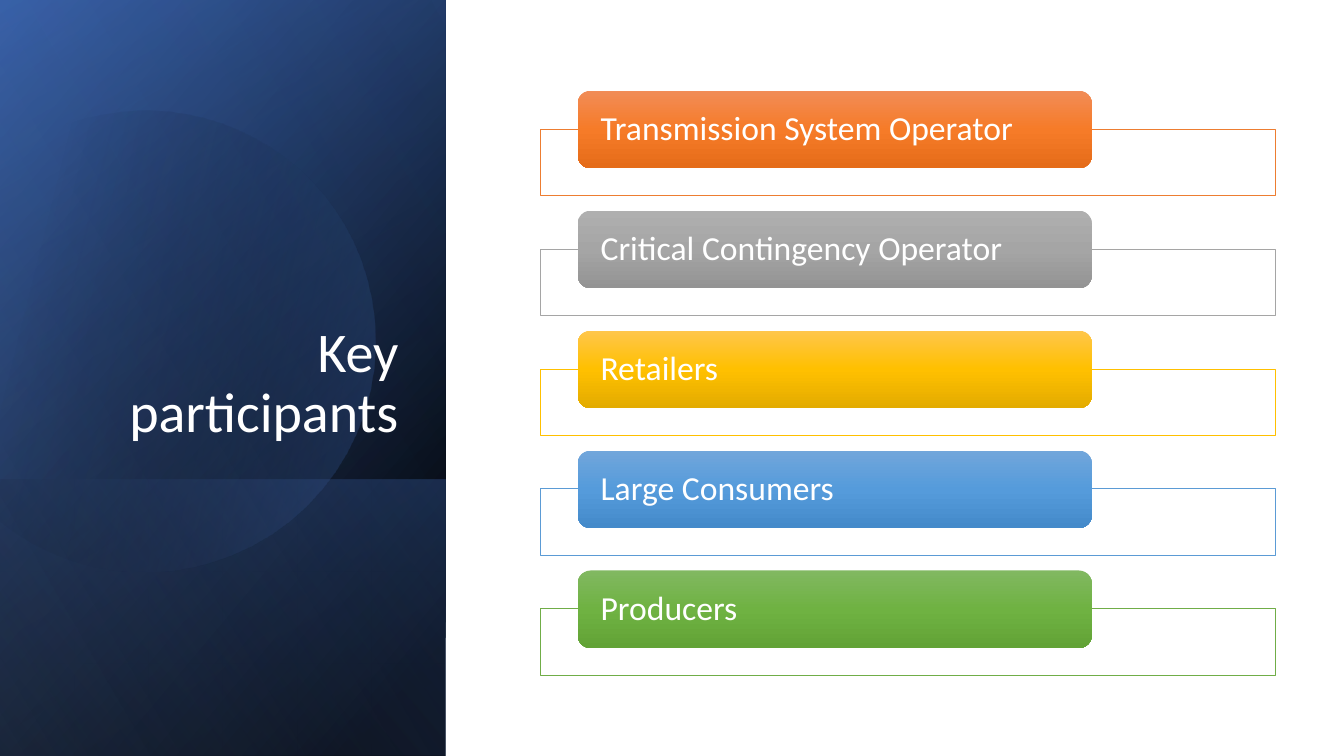
import math

from lxml import etree
from pptx import Presentation
from pptx import util as u
from pptx.dml.color import RGBColor
from pptx.enum import shapes, text
from pptx.oxml.ns import qn

COLUMNS, ROWS = 1333, 750
CELL = u.Inches(0.01)
PANEL_WIDTH = 442
ROW_PITCH = 119
WHITE = "FFFFFF"

PARTICIPANTS = [
    ("Transmission System Operator", "ED7D31", ("F18C57", "F67B28", "E56C19")),
    ("Critical Contingency Operator", "A5A5A5", ("AFAFAF", "A5A5A5", "939393")),
    ("Retailers", "FFC000", ("FFC64B", "FFC000", "E3AB00")),
    ("Large Consumers", "5B9BD5", ("71A6DB", "559BDB", "448ACA")),
    ("Producers", "70AD47", ("81B861", "6FB242", "62A336")),
]

DISC_START = (149, 110)
DISC_ARCS = [
    [(246, 112), (335, 177), (363, 275)],
    [(398, 397), (328, 523), (207, 558)],
    [(131, 580), (53, 561), (-3, 514)],
    [(-15, 503)],
    [(-15, 175)],
    [(0, 161)],
    [(23, 142), (50, 128), (80, 119)],
    [(103, 113), (126, 110), (149, 110)],
]
DISC_CENTRE = (158.5, 334.5)
DISC_TURN = 343.9


def cells(*counts):
    return [round(count * CELL) for count in counts]


def color(value):
    return RGBColor.from_string(value)


def set_alpha(color_element, opacity):
    etree.SubElement(color_element, qn("a:alpha"), val=str(opacity * 1000))


def paint_gradient(shape, stops, angle):
    shape.fill.gradient()
    gradient = shape._element.spPr.find(qn("a:gradFill"))
    stop_list = gradient.find(qn("a:gsLst"))
    for stop in list(stop_list):
        stop_list.remove(stop)
    for position, value, opacity in stops:
        stop = etree.SubElement(stop_list, qn("a:gs"), pos=str(position * 1000))
        set_alpha(etree.SubElement(stop, qn("a:srgbClr"), val=value), opacity)
    gradient.find(qn("a:lin")).set("ang", str(angle * 60000))


def add_block(slide, kind, left, top, width, height):
    block = slide.shapes.add_shape(kind, *cells(left, top, width, height))
    block.shadow.inherit = False
    block.line.fill.background()
    return block


def add_panel_layer(slide, top, stops, angle):
    height = ROWS - top
    layer = add_block(slide, shapes.MSO_SHAPE.RECTANGLE,
                      (PANEL_WIDTH - height) / 2, top + (height - PANEL_WIDTH) / 2,
                      height, PANEL_WIDTH)
    layer.rotation = 90
    layer._element.spPr.find(qn("a:xfrm")).set("flipH", "1")
    paint_gradient(layer, stops, angle)


def curve_points(start, controls, steps=16):
    if len(controls) == 1:
        return controls
    points = [start, *controls]
    return [
        tuple(sum(math.comb(3, k) * (1 - t) ** (3 - k) * t ** k * points[k][axis]
                  for k in range(4)) for axis in (0, 1))
        for t in (step / steps for step in range(1, steps + 1))
    ]


def turn_back(point):
    angle = math.radians(-DISC_TURN)
    dx, dy = point[0] - DISC_CENTRE[0], point[1] - DISC_CENTRE[1]
    return cells(DISC_CENTRE[0] + dx * math.cos(angle) - dy * math.sin(angle),
                 DISC_CENTRE[1] + dx * math.sin(angle) + dy * math.cos(angle))


def add_disc(slide):
    outline = [DISC_START]
    for arc in DISC_ARCS:
        outline += curve_points(outline[-1], arc)
    first, *rest = [turn_back(point) for point in outline]
    builder = slide.shapes.build_freeform(*first)
    builder.add_line_segments(rest, close=True)
    disc = builder.convert_to_shape()
    disc.rotation = DISC_TURN
    disc.shadow.inherit = False
    disc.line.fill.background()
    paint_gradient(disc, [(29, "000000", 0), (100, "4472C4", 43)], 30)


def write(shape, wording, size, align, anchor):
    frame = shape.text_frame
    frame.word_wrap = True
    frame.vertical_anchor = anchor
    frame.text = wording
    paragraph = frame.paragraphs[0]
    paragraph.alignment = align
    paragraph.line_spacing = 0.9
    font = paragraph.runs[0].font
    font.name, font.size = "Calibri", u.Pt(size)
    font.color.rgb = color(WHITE)


def add_title(slide):
    title = slide.shapes.add_textbox(*cells(64, 184, 341, 262))
    write(title, "Key participants", 40, text.PP_ALIGN.RIGHT, text.MSO_ANCHOR.BOTTOM)


def add_participant(slide, index, name, outline, shades):
    top = 90 + index * ROW_PITCH
    frame = add_block(slide, shapes.MSO_SHAPE.RECTANGLE, 536, top + 38, 729, 66)
    frame.fill.solid()
    frame.fill.fore_color.rgb = color(WHITE)
    set_alpha(frame._element.spPr.find(qn("a:solidFill"))[0], 90)
    frame.line.color.rgb = color(outline)
    frame.line.width = u.Pt(0.5)

    label = add_block(slide, shapes.MSO_SHAPE.ROUNDED_RECTANGLE, 573, top, 510, 77)
    paint_gradient(label, [(50 * i, shade, 100) for i, shade in enumerate(shades)], 90)
    margins = label.text_frame
    margins.margin_left, margins.margin_right = cells(19, 19)
    margins.margin_top = margins.margin_bottom = 0
    write(label, name, 24, text.PP_ALIGN.LEFT, text.MSO_ANCHOR.MIDDLE)


def main():
    deck = Presentation()
    deck.slide_width, deck.slide_height = cells(COLUMNS, ROWS)
    slide = deck.slides.add_slide(deck.slide_layouts[6])

    add_panel_layer(slide, 0, [(8, "000000", 100), (100, "2F5597", 100)], 50)
    add_panel_layer(slide, 0, [(0, "000000", 0), (99, "4472C4", 46)], 30)
    add_panel_layer(slide, 476, [(2, "4472C4", 29), (100, "000000", 30)], 130)
    add_disc(slide)
    add_panel_layer(slide, 0, [(0, "000000", 0), (99, "8FAADC", 11)], 120)
    add_title(slide)
    for index, participant in enumerate(PARTICIPANTS):
        add_participant(slide, index, *participant)
    deck.save("out.pptx")


if __name__ == "__main__":
    main()
